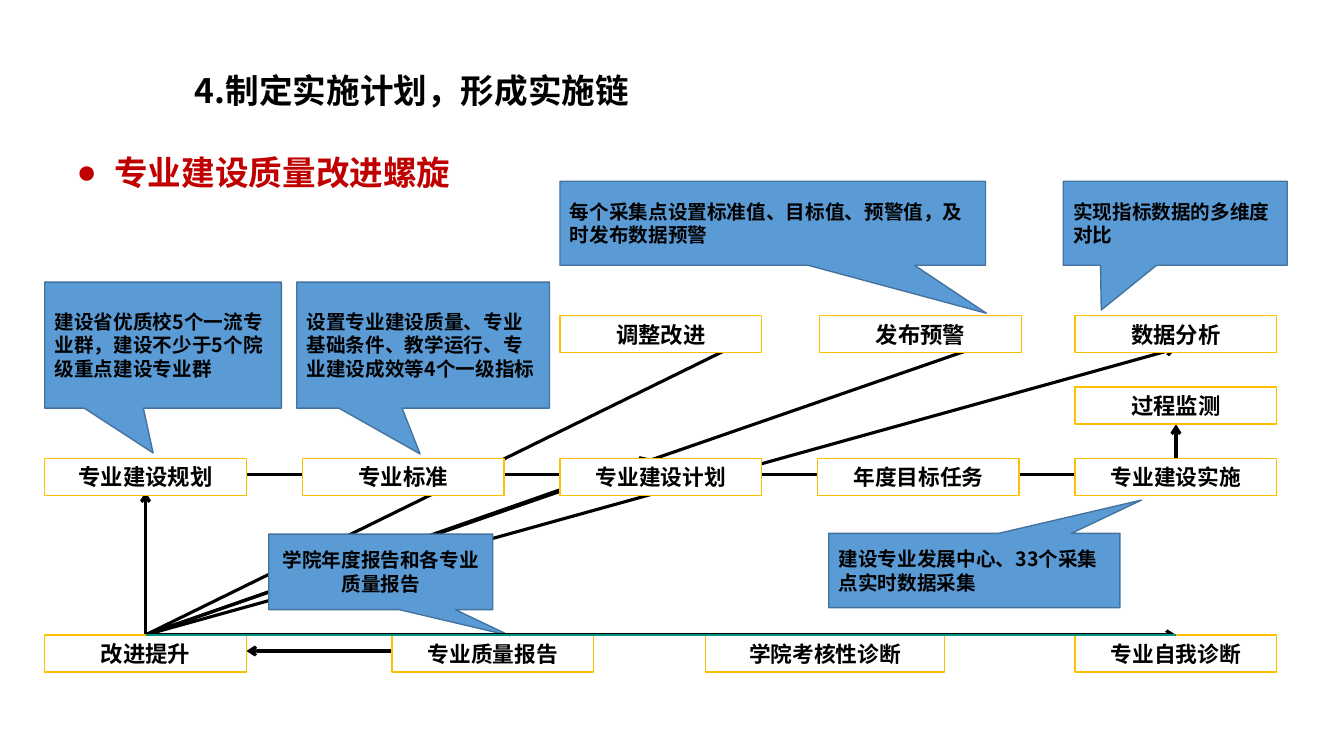
from dataclasses import dataclass

from lxml.etree import SubElement
from pptx import Presentation
from pptx.dml.color import RGBColor
from pptx.enum.shapes import MSO_CONNECTOR, MSO_SHAPE
from pptx.enum.text import MSO_ANCHOR, MSO_AUTO_SIZE, PP_ALIGN
from pptx.oxml.ns import qn
from pptx.util import Pt


@dataclass(frozen=True)
class Theme:
    black: str = "000000"
    white: str = "FFFFFF"
    gold: str = "FFC000"
    blue: str = "5B9BD5"
    navy: str = "43739E"
    red: str = "C00000"
    teal: str = "009287"
    sans: str = "Noto Sans CJK SC"
    latin: str = "Arial"
    head: float = 24
    step: float = 16
    long: float = 15.5
    note: float = 14


THEME = Theme()
LEFT, PITCH, WIDE, HIGH = 32, 184, 144, 26.5
TOP, WATCH, MAIN, BASE = 225.5, 276.5, 327.5, 453.5
ROOT = (LEFT + WIDE / 2, BASE)
LAST = LEFT + 4 * PITCH + WIDE / 2

STEPS = [
    (LEFT + 2 * PITCH, TOP, "调整改进", THEME.step),
    (LEFT + 3 * PITCH + 1.5, TOP, "发布预警", THEME.step),
    (LEFT + 4 * PITCH, TOP, "数据分析", THEME.step),
    (LEFT + 4 * PITCH, WATCH, "过程监测", THEME.step),
    (LEFT, MAIN, "专业建设规划", THEME.step),
    (LEFT + PITCH, MAIN, "专业标准", THEME.step),
    (LEFT + 2 * PITCH, MAIN, "专业建设计划", THEME.long),
    (LEFT + 3 * PITCH, MAIN, "年度目标任务", THEME.long),
    (LEFT + 4 * PITCH, MAIN, "专业建设实施", THEME.long),
    (LEFT, BASE, "改进提升", THEME.step),
    (280, BASE, "专业质量报告", THEME.long),
]

NOTES = [
    ((LEFT, 201.5, 169, 90), (-0.042, 0.856), PP_ALIGN.LEFT,
     "建设省优质校5个一流专业群，建设不少于5个院级重点建设专业群"),
    ((212, 201.5, 180.5, 90), (-0.012, 0.864), PP_ALIGN.LEFT,
     "设置专业建设质量、专业基础条件、教学运行、专业建设成效等4个一级指标"),
    ((192, 381.5, 160, 54), (0.577, 0.844), PP_ALIGN.CENTER,
     "学院年度报告和各专业质量报告"),
    ((592, 381, 208, 53), (0.574, -0.949), PP_ALIGN.LEFT,
     "建设专业发展中心、33个采集点实时数据采集"),
    ((400, 129.5, 304, 60), (0.502, 1.071), PP_ALIGN.LEFT,
     "每个采集点设置标准值、目标值、预警值，及时发布数据预警"),
    ((759.5, 129.5, 160, 60), (-0.33, 1.032), PP_ALIGN.LEFT,
     "实现指标数据的多维度对比"),
]


def color(code):
    return RGBColor.from_string(code)


def write(shape, text, size, align=PP_ALIGN.LEFT, ink=THEME.black,
          face=THEME.sans, anchor=MSO_ANCHOR.MIDDLE):
    frame = shape.text_frame
    frame.text = text
    frame.word_wrap = True
    frame.auto_size = MSO_AUTO_SIZE.NONE
    frame.vertical_anchor = anchor
    para = frame.paragraphs[0]
    para.alignment = align
    for run in para.runs:
        font = run.font
        font.size, font.bold, font.name = Pt(size), True, face
        font.color.rgb = color(ink)
        SubElement(run._r.get_or_add_rPr(), qn("a:ea"), typeface=THEME.sans)
    return para


def place(shape, *area):
    shape.left, shape.top, shape.width, shape.height = map(Pt, area)


def panel(slide, kind, area, fill, edge):
    shape = slide.shapes.add_shape(kind, *map(Pt, area))
    shape.shadow.inherit = False
    shape.fill.solid()
    shape.fill.fore_color.rgb = color(fill)
    shape.line.color.rgb = color(edge)
    shape.line.width = Pt(1)
    return shape


def step(slide, left, top, text, size, wide=WIDE):
    area = (left, top, wide, HIGH)
    box = panel(slide, MSO_SHAPE.RECTANGLE, area, THEME.white, THEME.gold)
    write(box, text, size, PP_ALIGN.CENTER)


def note(slide, area, tip, align, text):
    kind = MSO_SHAPE.RECTANGULAR_CALLOUT
    box = panel(slide, kind, area, THEME.blue, THEME.navy)
    box.adjustments[0], box.adjustments[1] = tip
    write(box, text, THEME.note, align)


def link(slide, start, end, ink=THEME.black, width=2.25, arrow=True):
    line = slide.shapes.add_connector(
        MSO_CONNECTOR.STRAIGHT, *map(Pt, (*start, *end)))
    line.line.color.rgb = color(ink)
    line.line.width = Pt(width)
    if arrow:
        SubElement(line.line._get_or_add_ln(), qn("a:tailEnd"), type="arrow")
    SubElement(line._element.spPr, qn("a:effectLst"))


def titles(slide):
    title, body = slide.placeholders
    place(title, 132, 46, 416, 36)
    write(title, "4.制定实施计划，形成实施链", THEME.head)
    place(body, 47.5, 105, 317, 51)
    para = write(body, "专业建设质量改进螺旋", THEME.head, ink=THEME.red,
                 face=THEME.latin, anchor=MSO_ANCHOR.TOP)
    props = para._p.get_or_add_pPr()
    props.set("marL", str(Pt(27)))
    props.set("indent", str(-Pt(27)))
    SubElement(props, qn("a:buChar"), char="●")


def links(slide):
    link(slide, (LAST, 333), (LAST, 303))
    for col in range(4):
        right = LEFT + col * PITCH + WIDE
        link(slide, (right, 339), (right + 48, 339))
    link(slide, (288, 465), (LEFT + WIDE, 465))
    link(slide, ROOT, (ROOT[0], 351.5))
    for end in ((LAST, 249), (728, 237.5), (544, 237.5), (464, MAIN)):
        link(slide, ROOT, end)


def main():
    deck = Presentation()
    deck.slide_width, deck.slide_height = Pt(960), Pt(540)
    slide = deck.slides.add_slide(deck.slide_layouts[1])
    titles(slide)
    links(slide)
    for item in STEPS:
        step(slide, *item)
    for item in NOTES:
        note(slide, *item)
    step(slide, 504, BASE, "学院考核性诊断", THEME.long, 170.5)
    link(slide, ROOT, (LAST, BASE))
    step(slide, LEFT + 4 * PITCH, BASE, "专业自我诊断", THEME.long)
    link(slide, ROOT, (LAST, BASE), THEME.teal, 1, False)
    deck.save("out.pptx")


if __name__ == "__main__":
    main()
